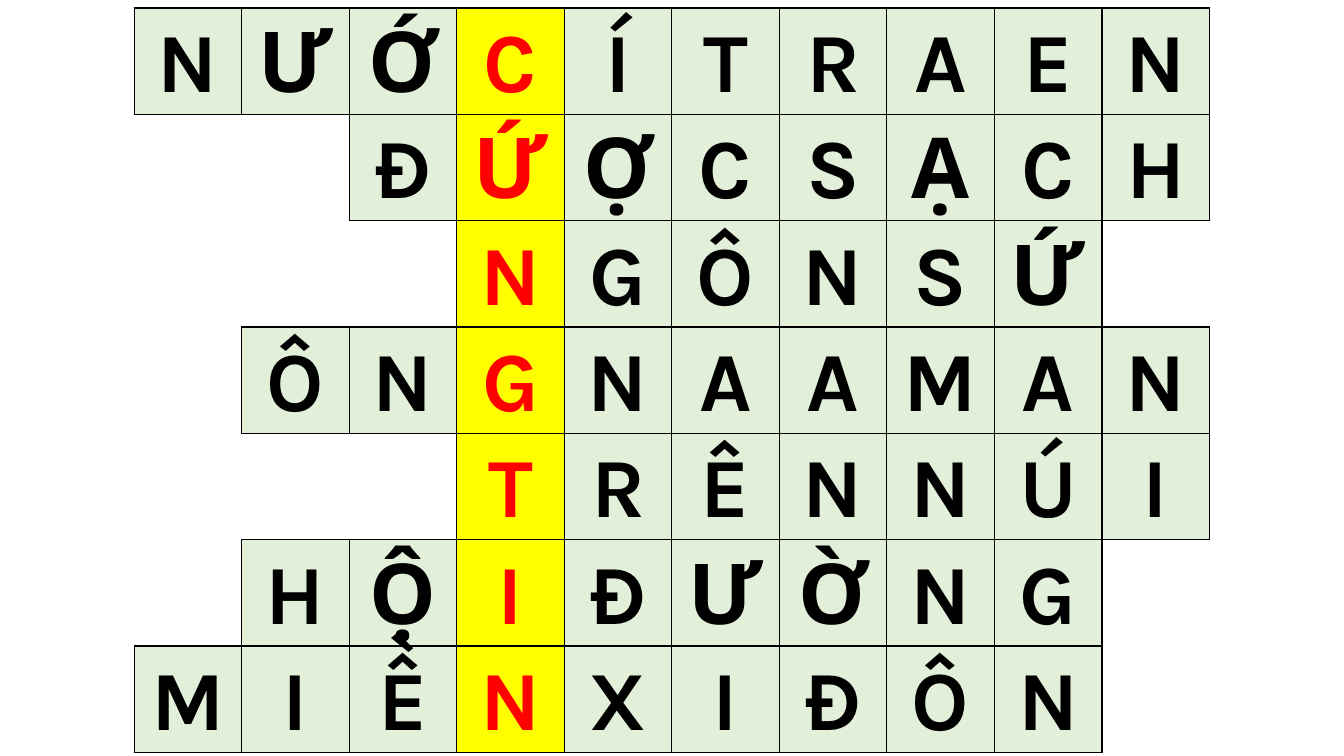
from lxml import etree
from pptx import Presentation
from pptx.dml.color import RGBColor
from pptx.enum.text import MSO_ANCHOR, PP_ALIGN
from pptx.oxml.ns import qn
from pptx.util import Cm, Pt

ANSWERS = [
    (0, "NƯỚCÍTRAEN"),
    (2, "ĐỨỢCSẠCH"),
    (3, "NGÔNSỨ"),
    (1, "ÔNGNAAMAN"),
    (3, "TRÊNNÚI"),
    (1, "HỘIĐƯỜNG"),
    (0, "MIỀNXIĐÔN"),
]
COLUMN_COUNT = 11
KEY_COLUMN = 3

BLACK = RGBColor(0x00, 0x00, 0x00)
RED = RGBColor(0xFF, 0x00, 0x00)
YELLOW = RGBColor(0xFF, 0xFF, 0x00)
PALE_GREEN = RGBColor(0xE2, 0xF0, 0xD9)
CENTER = PP_ALIGN.CENTER
MIDDLE = MSO_ANCHOR.MIDDLE

SLIDE_WIDTH, SLIDE_HEIGHT = Cm(33.87), Cm(19.05)
TABLE_LEFT, TABLE_TOP = Cm(3.38), Cm(0.2)
CELL_WIDTH, CELL_HEIGHT = Cm(2.71), Cm(2.68)
SIDE_MARGIN = Cm(0.19)
BORDER_WIDTH = Pt(1)
SIDES = [("a:lnL", 0, -1), ("a:lnR", 0, 1), ("a:lnT", -1, 0), ("a:lnB", 1, 0)]


def write_text(cell, text, color=BLACK, size=60, font="Karla"):
    cell.vertical_anchor = MIDDLE
    cell.margin_left = cell.margin_right = SIDE_MARGIN
    cell.margin_top = cell.margin_bottom = 0
    paragraph = cell.text_frame.paragraphs[0]
    paragraph.alignment = CENTER
    paragraph.line_spacing = 1.07
    paragraph.space_after = Pt(8)
    run = paragraph.add_run()
    run.text = text
    run.font.name = font
    run.font.size = Pt(size)
    run.font.bold = True
    run.font.color.rgb = color


def set_borders(cell, visible_sides):
    properties = cell._tc.get_or_add_tcPr()
    for index, (tag, _, _) in enumerate(SIDES):
        line = etree.Element(qn(tag), w=str(BORDER_WIDTH))
        if tag in visible_sides:
            fill = etree.SubElement(line, qn("a:solidFill"))
            etree.SubElement(fill, qn("a:srgbClr"), val=str(BLACK))
        else:
            etree.SubElement(line, qn("a:noFill"))
        properties.insert(index, line)


def main():
    presentation = Presentation()
    presentation.slide_width = SLIDE_WIDTH
    presentation.slide_height = SLIDE_HEIGHT
    slide = presentation.slides.add_slide(presentation.slide_layouts[6])
    row_count = len(ANSWERS)
    table = slide.shapes.add_table(
        row_count, COLUMN_COUNT, TABLE_LEFT, TABLE_TOP,
        CELL_WIDTH * COLUMN_COUNT, CELL_HEIGHT * row_count,
    ).table
    table.first_row = False
    table.horz_banding = False
    for column in table.columns:
        column.width = CELL_WIDTH
    for row in table.rows:
        row.height = CELL_HEIGHT

    letters = {
        (row, start + offset): letter
        for row, (start, answer) in enumerate(ANSWERS)
        for offset, letter in enumerate(answer)
    }
    for row in range(row_count):
        for column in range(COLUMN_COUNT):
            cell = table.cell(row, column)
            letter = letters.get((row, column))
            if letter:
                is_key = column == KEY_COLUMN
                cell.fill.solid()
                cell.fill.fore_color.rgb = YELLOW if is_key else PALE_GREEN
                write_text(cell, letter, color=RED if is_key else BLACK)
            else:
                cell.fill.background()
            set_borders(cell, [
                tag for tag, down, across in SIDES
                if letter or (row + down, column + across) in letters
            ])

    presentation.save("out.pptx")


if __name__ == "__main__":
    main()
